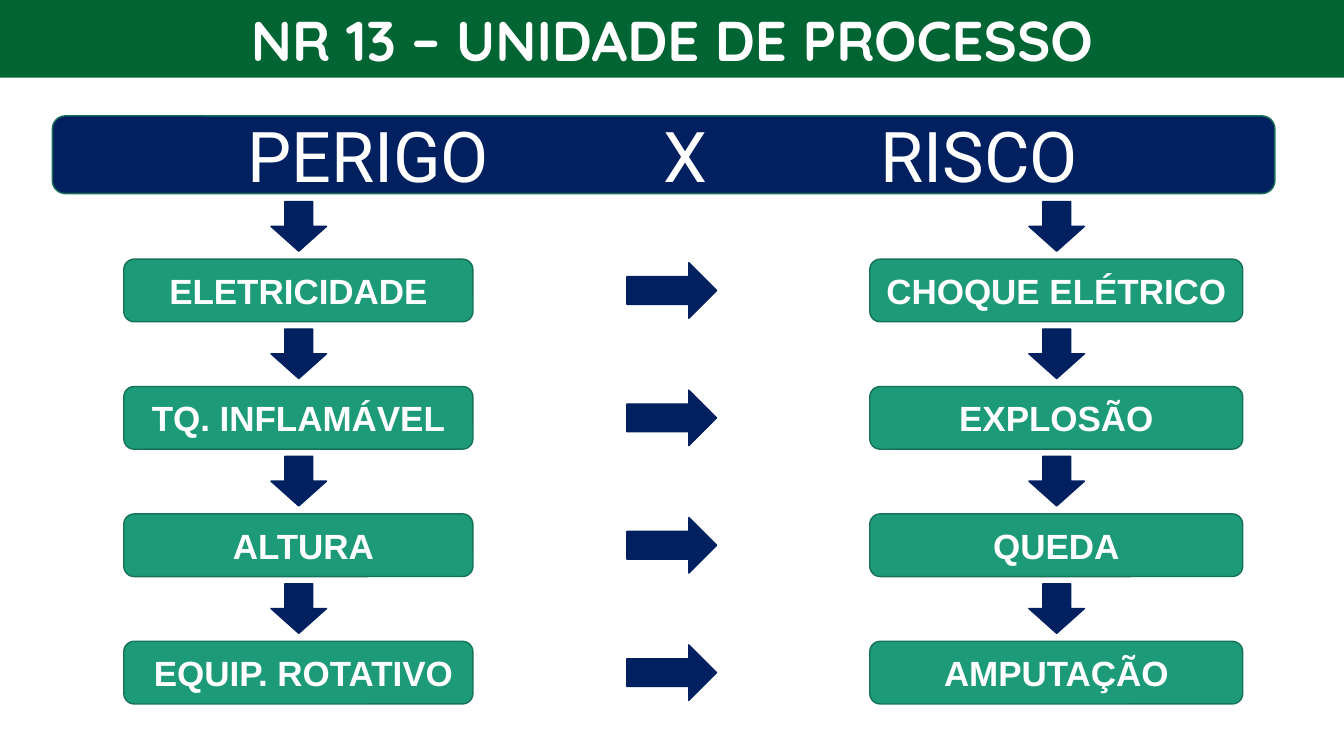
from dataclasses import dataclass

from lxml import etree
from pptx import Presentation, dml, util as u
from pptx.dml import color
from pptx.enum import shapes, text
from pptx.oxml import ns
from pptx.shapes.autoshape import Shape
from pptx.slide import Slide

COLOURS = {
    "title": "006433",
    "navy": "002060",
    "green": "1D9A78",
    "edge": "157259",
    "white": "FFFFFF",
}
PAGE_WIDTH, PAGE_HEIGHT = 33.87, 19.05
FIRST_ROW, ROW_STEP, BOX_HEIGHT = 6.53, 3.21, 1.58
DOWN_WIDTH, DOWN_HEIGHT, DOWN_RISE = 1.4, 1.25, 1.45
ACROSS_LEFT, ACROSS_WIDTH, ACROSS_HEIGHT = 15.8, 2.26, 1.4
INSET = 0.25


@dataclass
class Label:
    words: str
    indent: float = 0


@dataclass
class Column:
    left: float
    width: float
    arrow_left: float
    labels: list[Label]


HAZARDS = Column(3.12, 8.8, 6.83, [
    Label("ELETRICIDADE"),
    Label("TQ. INFLAMÁVEL"),
    Label("ALTURA", indent=0.25),
    Label("EQUIP. ROTATIVO", indent=0.25),
])
RISKS = Column(21.92, 9.4, 25.93, [
    Label("CHOQUE ELÉTRICO"),
    Label("EXPLOSÃO"),
    Label("QUEDA"),
    Label("AMPUTAÇÃO"),
])
HEADING_TABS = [7.87, 15.85, 23.27]


def rgb(name: str) -> color.RGBColor:
    return color.RGBColor.from_string(COLOURS[name])


def add_box(page: Slide, kind: shapes.MSO_SHAPE, left: float, top: float,
            width: float, height: float, *, fill: str, line: str) -> Shape:
    box = page.shapes.add_shape(kind, u.Cm(left), u.Cm(top), u.Cm(width), u.Cm(height))
    box.shadow.inherit = False
    box.fill.solid()
    box.fill.fore_color.rgb = rgb(fill)
    box.line.color.rgb = rgb(line)
    box.line.width = u.Pt(1)
    return box


def write(box: Shape, words: str, *, font: str, size: float, bold: bool = False,
          anchor: text.MSO_ANCHOR = text.MSO_ANCHOR.MIDDLE,
          indent: float = 0, tabs: tuple[float, ...] = ()) -> None:
    """Fill the box with one white line, centred or set on centring tab stops."""
    frame = box.text_frame
    frame.word_wrap = True
    frame.auto_size = text.MSO_AUTO_SIZE.NONE
    frame.vertical_anchor = anchor
    frame.margin_left = u.Cm(INSET + indent)
    frame.margin_right = u.Cm(INSET)
    if tabs:
        frame.margin_left = frame.margin_right = 0
    para = frame.paragraphs[0]
    para.alignment = text.PP_ALIGN.LEFT if tabs else text.PP_ALIGN.CENTER
    if tabs:
        properties = para._p.get_or_add_pPr()
        stops = etree.SubElement(properties, ns.qn("a:tabLst"))
        for position in tabs:
            etree.SubElement(stops, ns.qn("a:tab"), pos=str(u.Cm(position)), algn="ctr")
    span = para.add_run()
    span.text = words
    span.font.name = font
    span.font.size = u.Pt(size)
    span.font.bold = bold
    span.font.color.rgb = rgb("white")


def add_title(page: Slide) -> None:
    title = page.shapes.title
    title.left = title.top = 0
    title.width, title.height = u.Cm(PAGE_WIDTH), u.Cm(1.96)
    title.fill.solid()
    title.fill.fore_color.rgb = rgb("title")
    write(title, "NR 13 – UNIDADE DE PROCESSO", font="Quicksand", size=40,
          bold=True, anchor=text.MSO_ANCHOR.TOP)


def add_heading(page: Slide) -> None:
    heading = add_box(page, shapes.MSO_SHAPE.ROUNDED_RECTANGLE, 1.32, 2.92, 30.81, 1.96,
                      fill="navy", line="edge")
    write(heading, "\tPERIGO\tX\tRISCO", font="Roboto", size=50, tabs=tuple(HEADING_TABS))


def add_column(page: Slide, column: Column) -> None:
    for row, label in enumerate(column.labels):
        top = FIRST_ROW + row * ROW_STEP
        add_box(page, shapes.MSO_SHAPE.DOWN_ARROW, column.arrow_left, top - DOWN_RISE,
                DOWN_WIDTH, DOWN_HEIGHT, fill="navy", line="navy")
        box = add_box(page, shapes.MSO_SHAPE.ROUNDED_RECTANGLE, column.left, top,
                      column.width, BOX_HEIGHT, fill="green", line="edge")
        write(box, label.words, font="Arial", size=25, bold=True, indent=label.indent)


def add_links(page: Slide) -> None:
    """Point each hazard to the risk on its row."""
    for row in range(len(HAZARDS.labels)):
        top = FIRST_ROW + row * ROW_STEP + (BOX_HEIGHT - ACROSS_HEIGHT) / 2
        add_box(page, shapes.MSO_SHAPE.RIGHT_ARROW, ACROSS_LEFT, top,
                ACROSS_WIDTH, ACROSS_HEIGHT, fill="navy", line="navy")


def main() -> None:
    deck = Presentation()
    deck.slide_width, deck.slide_height = u.Cm(PAGE_WIDTH), u.Cm(PAGE_HEIGHT)
    page = deck.slides.add_slide(deck.slide_layouts.get_by_name("Title Only"))
    add_title(page)
    add_heading(page)
    for column in (HAZARDS, RISKS):
        add_column(page, column)
    add_links(page)
    deck.save("out.pptx")


if __name__ == "__main__":
    main()
